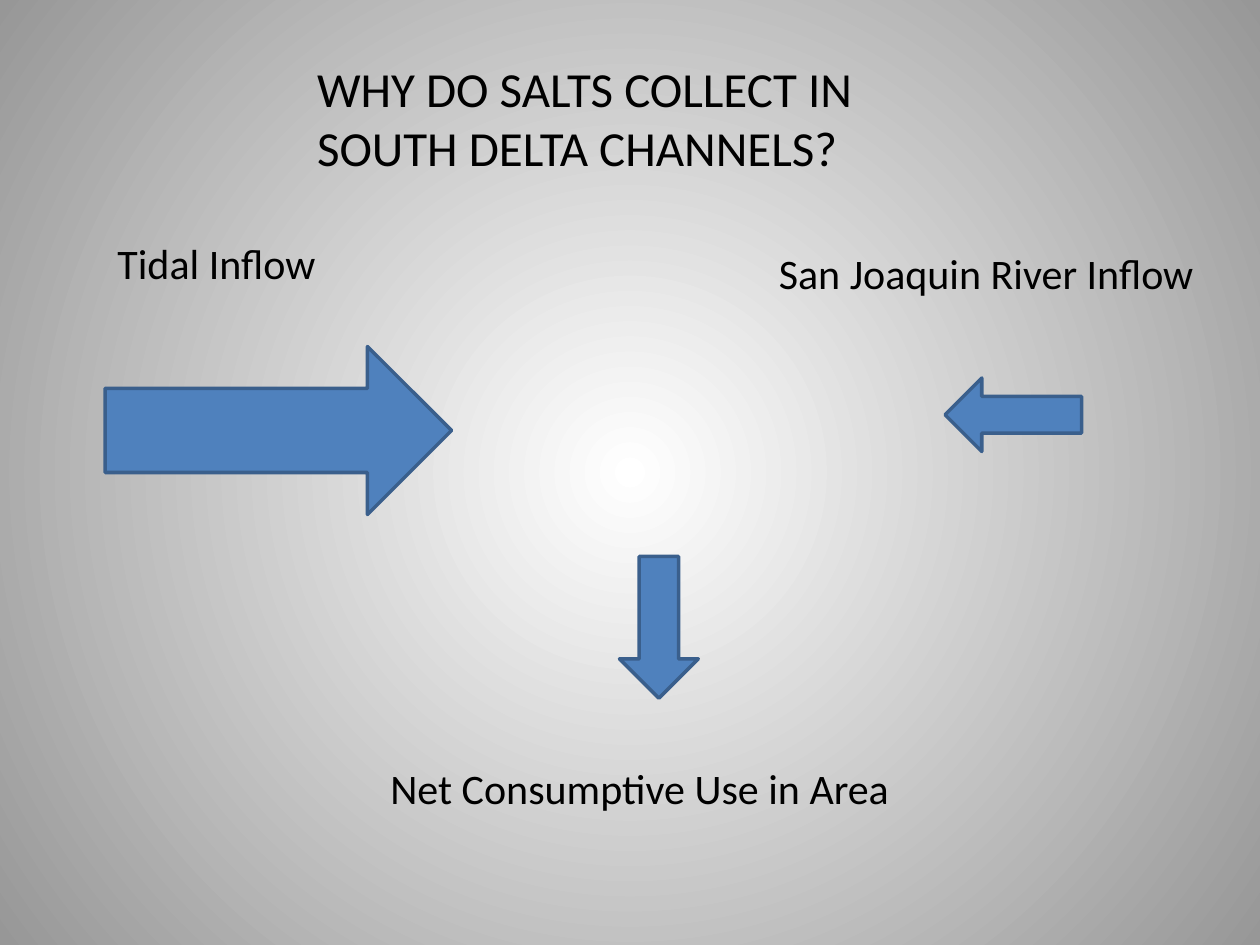
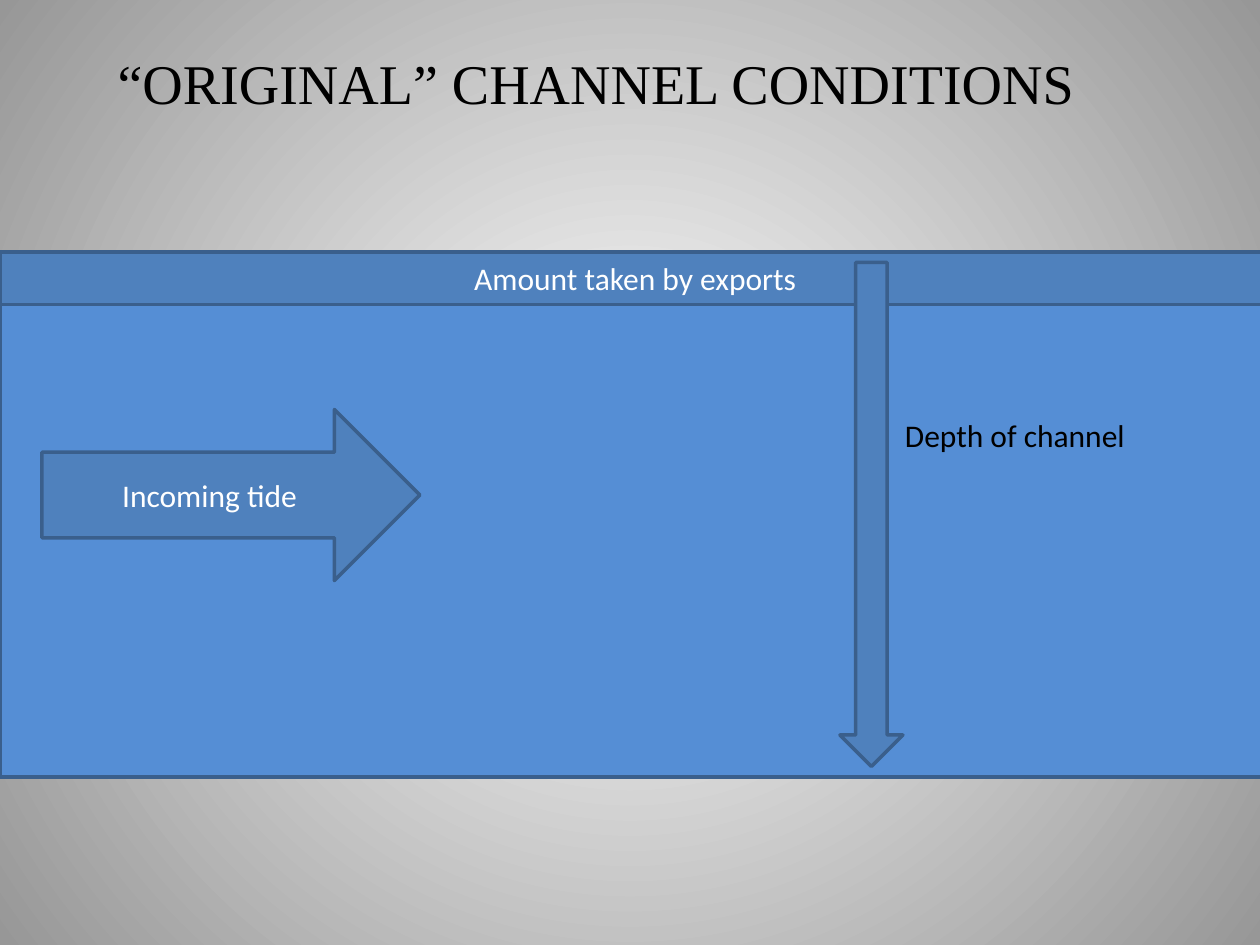
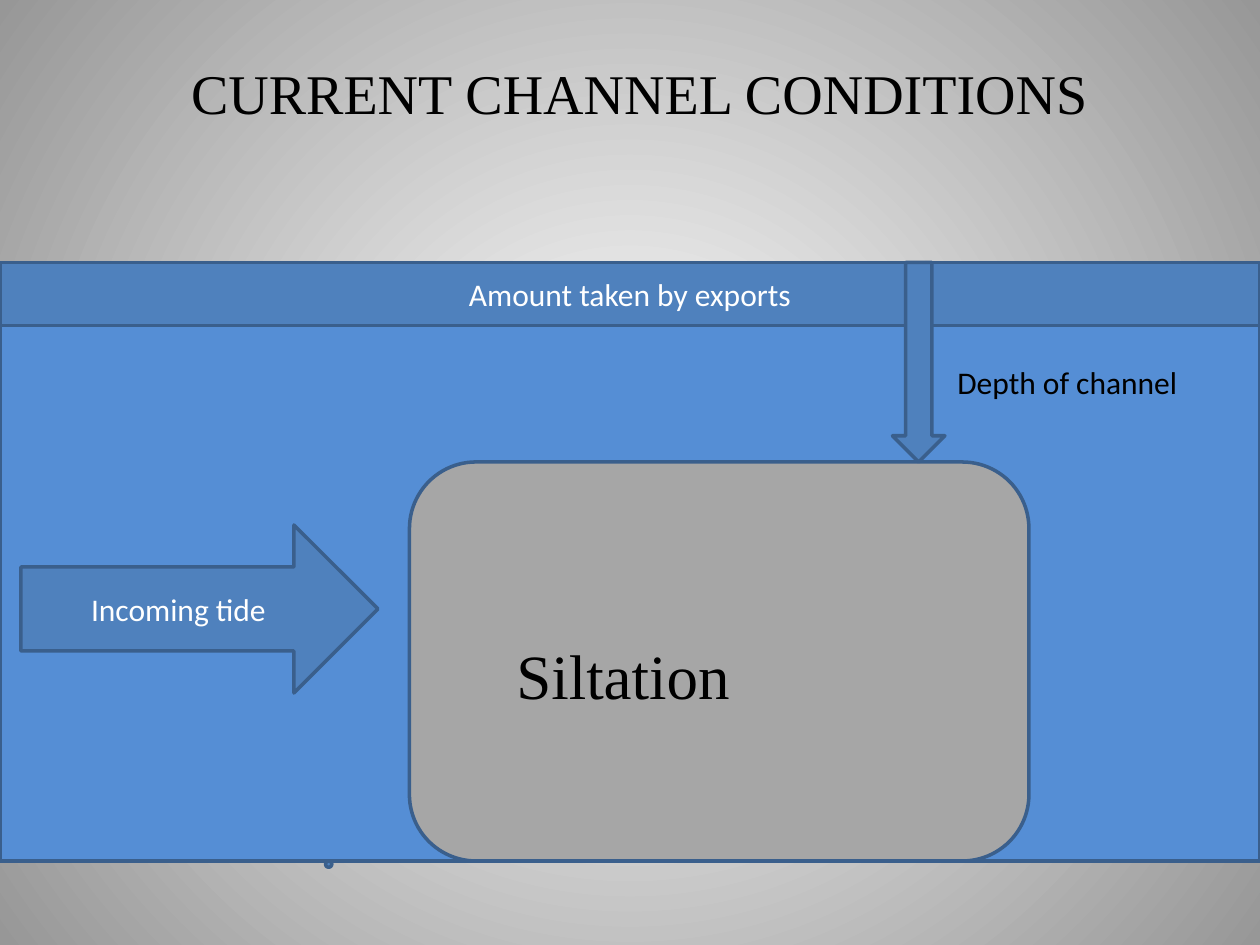
from lxml.etree import fromstring
from pptx import Presentation
from pptx.dml.color import RGBColor
from pptx.enum.shapes import MSO_SHAPE
from pptx.enum.text import MSO_ANCHOR, MSO_AUTO_SIZE, PP_ALIGN
from pptx.oxml.ns import nsdecls, qn
from pptx.util import Inches, Pt

COLORS = {
    "glow": "FFFFFF",
    "edge": "979797",
    "water": "558ED5",
    "flow": "4F81BD",
    "outline": "3A5F8C",
    "silt": "A6A6A6",
    "dark": "000000",
    "light": "FFFFFF",
}
SANS, SERIF = "Calibri", "Times New Roman"
COLUMNS, ROWS = 120, 90
TITLE_ONLY = 5


def rgb(name):
    return RGBColor.from_string(COLORS[name])


def write(frame, text, size=18, font=SANS, color="dark",
          align=PP_ALIGN.LEFT, anchor=MSO_ANCHOR.TOP):
    frame.word_wrap = True
    frame.auto_size = MSO_AUTO_SIZE.NONE
    frame.vertical_anchor = anchor
    paragraph = frame.paragraphs[0]
    paragraph.text = text
    paragraph.alignment = align
    for run in paragraph.runs:
        run.font.size = Pt(size)
        run.font.name = font
        run.font.color.rgb = rgb(color)


class Deck:
    """Shared style and the current slide; boxes are (column, row, columns, rows)."""

    def __init__(self):
        self.show = Presentation()
        self.show.slide_width, self.show.slide_height = Inches(10), Inches(7.5)
        self.slide = None
        self.paint_background()

    def paint_background(self):
        master = self.show.slide_master
        master.background.fill.solid()
        properties = master.element.find(".//" + qn("p:bgPr"))
        stops = "".join(
            f'<a:gs pos="{position}"><a:srgbClr val="{COLORS[name]}"/></a:gs>'
            for position, name in ((0, "glow"), (100000, "edge")))
        properties.replace(properties[0], fromstring(
            f'<a:gradFill {nsdecls("a")} rotWithShape="1"><a:gsLst>{stops}</a:gsLst>'
            '<a:path path="circle">'
            '<a:fillToRect l="50000" t="50000" r="50000" b="50000"/>'
            '</a:path></a:gradFill>'))

    def place(self, box):
        column, row, columns, rows = box
        cell_width = self.show.slide_width / COLUMNS
        cell_height = self.show.slide_height / ROWS
        return (round(column * cell_width), round(row * cell_height),
                round(columns * cell_width), round(rows * cell_height))

    def new_slide(self, title, box, **style):
        self.slide = self.show.slides.add_slide(self.show.slide_layouts[TITLE_ONLY])
        heading = self.slide.shapes.title
        heading.left, heading.top, heading.width, heading.height = self.place(box)
        write(heading.text_frame, title, **style)

    def shape(self, preset, box, text="", fill="flow", rotation=0):
        body = self.slide.shapes.add_shape(preset, *self.place(box))
        body.shadow.inherit = False
        body.rotation = rotation
        body.fill.solid()
        body.fill.fore_color.rgb = rgb(fill)
        body.line.color.rgb = rgb("outline")
        body.line.width = Pt(2)
        if text:
            write(body.text_frame, text, color="light",
                  align=PP_ALIGN.CENTER, anchor=MSO_ANCHOR.MIDDLE)

    def label(self, text, box, **style):
        write(self.slide.shapes.add_textbox(*self.place(box)).text_frame, text, **style)

    def channel(self, top, width, depth, export_depth):
        """Water body with the exported layer on top."""
        self.shape(MSO_SHAPE.RECTANGLE, (0, top, width, depth), fill="water")
        self.shape(MSO_SHAPE.RECTANGLE, (0, top, width, export_depth),
                   "Amount taken by exports")

    def tide(self, box):
        self.shape(MSO_SHAPE.RIGHT_ARROW, box, "Incoming tide")

    def depth(self, arrow_box, label_box):
        self.shape(MSO_SHAPE.DOWN_ARROW, arrow_box)
        self.label("Depth of channel", label_box)


def salt_sources(deck):
    deck.new_slide("WHY DO SALTS COLLECT IN\vSOUTH DELTA CHANNELS?",
                   (29, 5, 69, 12.5), size=28)
    # Flows into and out of the area
    flows = (
        ("Tidal Inflow", (10, 22, 24, 6), (10, 33, 33, 16), 0),
        ("San Joaquin River Inflow", (73, 23, 43, 6), (90, 36, 13, 7), 180),
        ("Net Consumptive Use in Area", (36, 72, 53, 6), (56, 56, 13.5, 7.5), 90),
    )
    for name, name_box, arrow_box, rotation in flows:
        deck.shape(MSO_SHAPE.RIGHT_ARROW, arrow_box, rotation=rotation)
        deck.label(name, name_box, size=24)


def original_channel(deck):
    deck.new_slide("“ORIGINAL” CHANNEL CONDITIONS", (10, 4, 107, 7.7),
                   size=32, font=SERIF)
    deck.channel(top=24, width=121, depth=50, export_depth=5)
    deck.tide((4, 39, 36, 16.3))
    deck.depth((80, 25, 6, 48), (85, 39, 28, 5))


def current_channel(deck):
    deck.new_slide("CURRENT CHANNEL CONDITIONS", (17, 5, 93, 7.7),
                   size=32, font=SERIF)
    deck.channel(top=25, width=120, depth=57, export_depth=6)
    # Silt on the channel bed
    deck.shape(MSO_SHAPE.OVAL, (31, 82, 0.6, 0.6))
    deck.shape(MSO_SHAPE.ROUNDED_RECTANGLE, (39, 44, 59, 38), fill="silt")
    deck.label("Siltation", (48, 60, 25, 8.5), size=36, font=SERIF)
    # Tide and the remaining depth
    deck.tide((2, 50, 34, 16))
    deck.depth((85, 25, 5, 19), (90, 34, 24, 4.8))


def main():
    deck = Deck()
    for build in (salt_sources, original_channel, current_channel):
        build(deck)
    deck.show.save("out.pptx")


if __name__ == "__main__":
    main()
